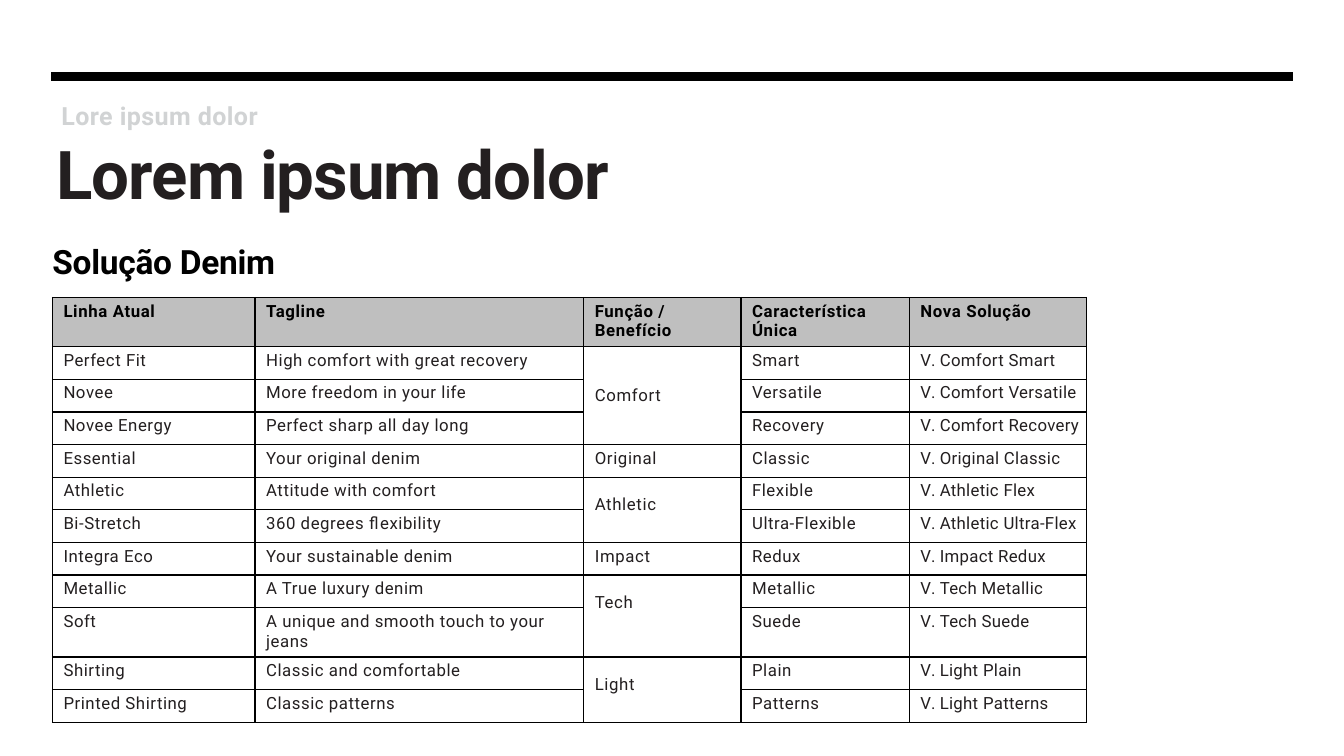
from lxml.etree import SubElement
from pptx import Presentation
from pptx.dml.color import RGBColor
from pptx.enum.shapes import MSO_CONNECTOR
from pptx.enum.text import MSO_ANCHOR, PP_ALIGN
from pptx.oxml.ns import qn
from pptx.util import Inches, Pt

BLACK = RGBColor(0x00, 0x00, 0x00)
INK = RGBColor(0x23, 0x1F, 0x20)
PALE_GRAY = RGBColor(0xD1, 0xD3, 0xD4)
HEADER_GRAY = RGBColor(0xBF, 0xBF, 0xBF)
FONT = "Roboto"

TITLE = "Lorem ipsum dolor"
KICKER = "Lore ipsum dolor"
SUBTITLE = "Solução Denim"
HEADERS = ["Linha Atual", "Tagline", "Função / Benefício", "Característica Única", "Nova Solução"]
GROUPS = [
    ("Comfort", [
        ("Perfect Fit", "High comfort with great recovery", "Smart", "Comfort Smart"),
        ("Novee", "More freedom in your life", "Versatile", "Comfort Versatile"),
        ("Novee Energy", "Perfect sharp all day long", "Recovery", "Comfort Recovery"),
    ]),
    ("Original", [("Essential", "Your original denim", "Classic", "Original Classic")]),
    ("Athletic", [
        ("Athletic", "Attitude with comfort", "Flexible", "Athletic Flex"),
        ("Bi-Stretch", "360 degrees flexibility", "Ultra-Flexible", "Athletic Ultra-Flex"),
    ]),
    ("Impact", [("Integra Eco", "Your sustainable denim", "Redux", "Impact Redux")]),
    ("Tech", [
        ("Metallic", "A True luxury denim", "Metallic", "Tech Metallic"),
        ("Soft", "A unique and smooth touch to your jeans", "Suede", "Tech Suede"),
    ]),
    ("Light", [
        ("Shirting", "Classic and comfortable", "Plain", "Light Plain"),
        ("Printed Shirting", "Classic patterns", "Patterns", "Light Patterns"),
    ]),
]
COLUMN_WIDTHS = [2.01, 3.26, 1.56, 1.67, 1.76]
TABLE_LEFT, TABLE_TOP, TABLE_HEIGHT = 0.52, 2.95, 4.22
TALL_ROWS, TALL_HEIGHT = (0, 9), 0.49
TOP_MARGINS = {1: 0.04, 2: 0.18, 3: 0.39}


def write_text(frame, *runs, size=12, color=INK, bold=False):
    """Write (text, letter spacing) runs into the first paragraph of a frame."""
    frame.word_wrap = True
    paragraph = frame.paragraphs[0]
    paragraph.alignment = PP_ALIGN.LEFT
    for text, spacing in runs:
        run = paragraph.add_run()
        run.text = text
        run.font.name = FONT
        run.font.size = Pt(size)
        run.font.bold = bold
        run.font.color.rgb = color
        run.font._element.set("spc", str(round(spacing * 100)))


def place_heading(shape, box, text, spacing, anchor=MSO_ANCHOR.TOP, **text_format):
    """Position a heading shape and write its text."""
    shape.left, shape.top, shape.width, shape.height = map(Inches, box)
    frame = shape.text_frame
    frame.margin_left = frame.margin_top = Inches(0.01)
    frame.margin_right = frame.margin_bottom = 0
    frame.vertical_anchor = anchor
    write_text(frame, (text, spacing), bold=True, **text_format)


def style_cell(cell, fill=None):
    """Give a cell its margins, black borders and fill."""
    cell.margin_left = Inches(0.11)
    cell.margin_top = Inches(TOP_MARGINS[1])
    cell.margin_right = cell.margin_bottom = 0
    cell.vertical_anchor = MSO_ANCHOR.TOP
    properties = cell._tc.get_or_add_tcPr()
    for side in ("lnL", "lnR", "lnT", "lnB"):
        border = SubElement(properties, qn(f"a:{side}"), w=str(Pt(1)))
        solid = SubElement(border, qn("a:solidFill"))
        SubElement(solid, qn("a:srgbClr"), val=str(BLACK))
    if fill is None:
        cell.fill.background()
    else:
        cell.fill.solid()
        cell.fill.fore_color.rgb = fill


def add_denim_table(slide):
    """Add the denim table with one merged benefit cell per group."""
    row_count = 1 + sum(len(lines) for _, lines in GROUPS)
    table = slide.shapes.add_table(
        row_count, len(HEADERS), Inches(TABLE_LEFT), Inches(TABLE_TOP),
        Inches(sum(COLUMN_WIDTHS)), Inches(TABLE_HEIGHT)).table
    table.first_row = table.horz_banding = False
    for column, width in zip(table.columns, COLUMN_WIDTHS):
        column.width = Inches(width)
    plain_height = (TABLE_HEIGHT - len(TALL_ROWS) * TALL_HEIGHT) / (row_count - len(TALL_ROWS))
    for index, row in enumerate(table.rows):
        row.height = Inches(TALL_HEIGHT if index in TALL_ROWS else plain_height)
        for cell in row.cells:
            style_cell(cell, HEADER_GRAY if index == 0 else None)

    for column, header in enumerate(HEADERS):
        write_text(table.cell(0, column).text_frame, (header, 0.45), color=BLACK, bold=True)
    first = 1
    for benefit, lines in GROUPS:
        benefit_cell = table.cell(first, 2)
        benefit_cell.margin_top = Inches(TOP_MARGINS[len(lines)])
        if len(lines) > 1:
            benefit_cell.merge(table.cell(first + len(lines) - 1, 2))
        write_text(benefit_cell.text_frame, (benefit, 0.45))
        for row, (line, tagline, feature, solution) in enumerate(lines, first):
            for column, text in ((0, line), (1, tagline), (3, feature)):
                write_text(table.cell(row, column).text_frame, (text, 0.4))
            write_text(table.cell(row, 4).text_frame, ("V", -0.9), (". ", 0), (solution, 0.24))
        first += len(lines)


def main():
    """Build and save the slide."""
    presentation = Presentation()
    presentation.slide_width, presentation.slide_height = Inches(13.33), Inches(7.5)
    slide = presentation.slides.add_slide(presentation.slide_layouts[5])

    rule = slide.shapes.add_connector(
        MSO_CONNECTOR.STRAIGHT, Inches(0.51), Inches(0.76), Inches(12.82), Inches(0.76))
    rule.line.color.rgb = BLACK
    rule.line.width = Pt(6)
    SubElement(rule._element.spPr, qn("a:effectLst"))

    place_heading(slide.shapes.title, (0.55, 1.3, 6.11, 0.82), TITLE, -0.7,
                  anchor=MSO_ANCHOR.MIDDLE, size=48)
    for box, text, spacing, size, color in (
            ((0.6, 0.99, 3.13, 0.31), KICKER, 0.3, 17.9, PALE_GRAY),
            ((0.51, 2.38, 2.71, 0.41), SUBTITLE, -0.2, 23.9, BLACK)):
        place_heading(slide.shapes.add_textbox(0, 0, 0, 0), box, text, spacing,
                      size=size, color=color)
    add_denim_table(slide)
    presentation.save("out.pptx")


if __name__ == "__main__":
    main()
